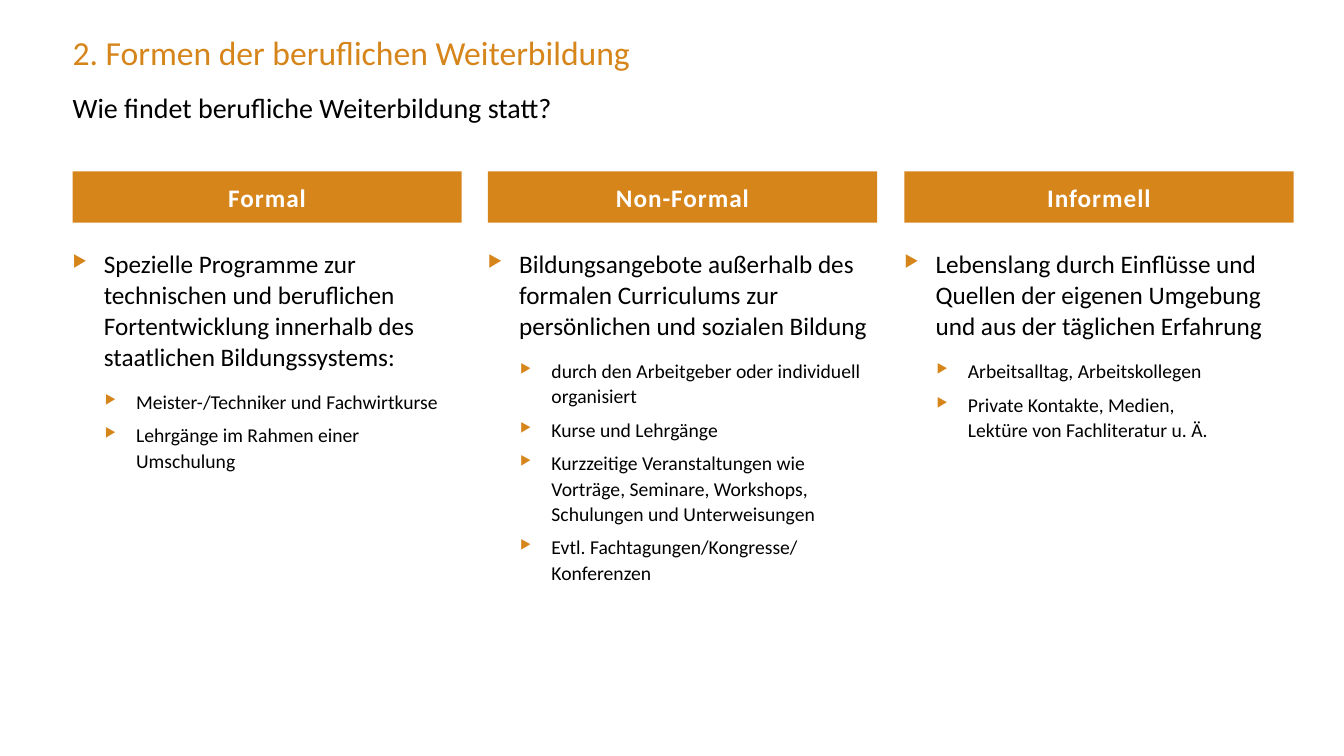
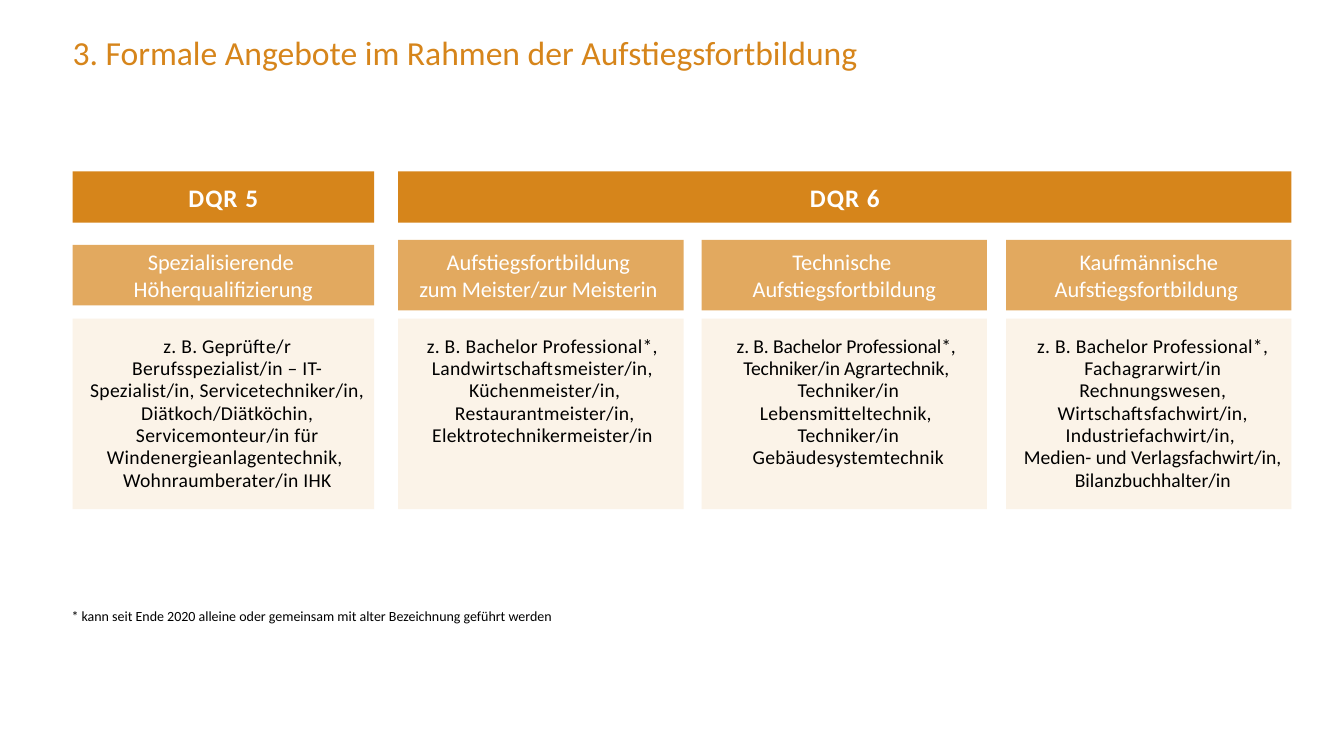
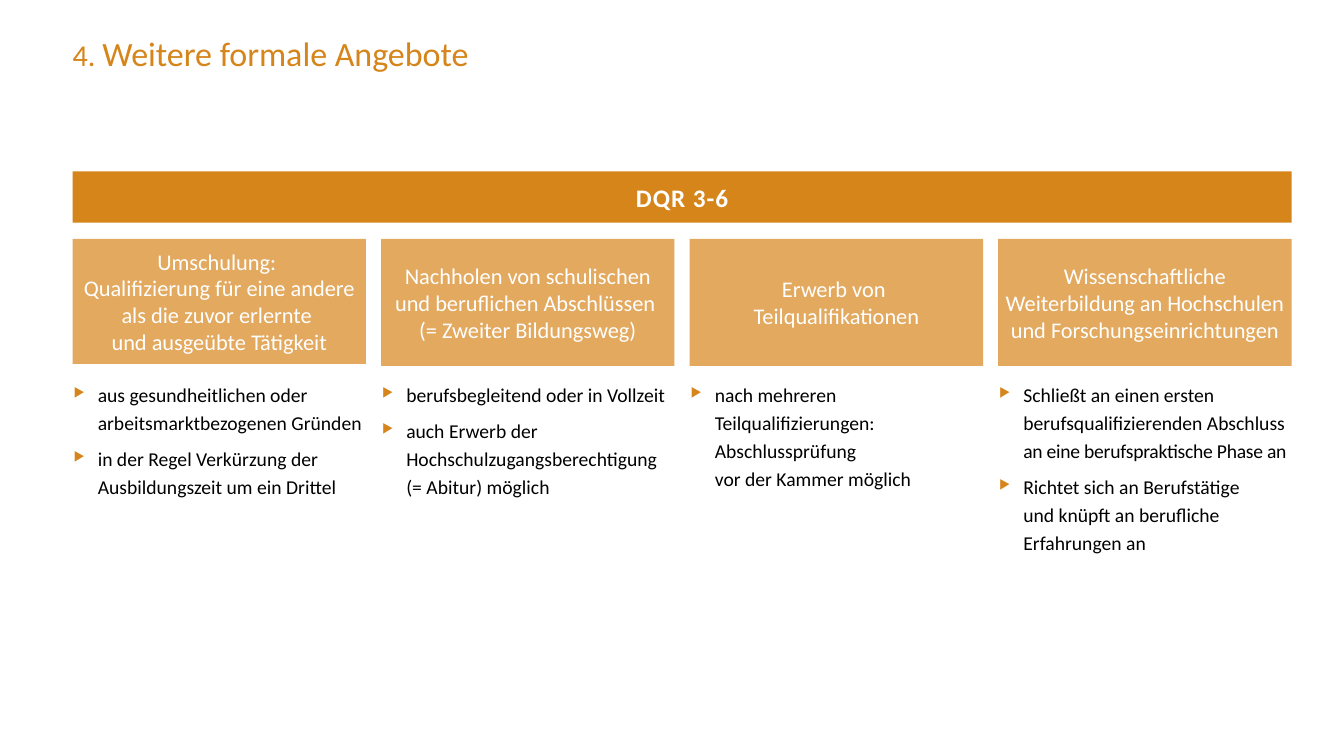
from lxml import etree
from pptx import Presentation
from pptx.dml.color import RGBColor
from pptx.enum.shapes import MSO_SHAPE
from pptx.enum.text import MSO_ANCHOR, PP_ALIGN
from pptx.oxml.ns import qn
from pptx.util import Emu, Pt

ORANGE, LIGHT_ORANGE, CREAM = "D6851B", "E2A95F", "FBF3E8"
BLACK, WHITE = "000000", "FFFFFF"
LEFT, RIGHT, BAND_TOP, BAND_HEIGHT = 72, 1281, 170, 51

# Paragraph formats for bullets; margin and indent in px
TOPIC = {"size": 18, "line": 22, "after": 6, "margin": 31, "indent": 31}
DETAIL = {"size": 14, "line": 18, "before": 6, "margin": 63, "indent": 31, "level": 1}
NOTE = {"size": 14, "line": 20, "before": 6, "margin": 55, "indent": 24, "level": 1}


def px(length):
    """One px is a hundredth of an inch."""
    return Emu(round(length * 9144))


def color(code):
    return RGBColor.from_string(code)


def columns(left, right, count, gap):
    """Left edges and common width of equal columns."""
    width = (right - left - gap * (count - 1)) / count
    return [round(left + i * (width + gap)) for i in range(count)], round(width)


class Slides:
    def __init__(self):
        self.deck = Presentation()
        self.deck.slide_width, self.deck.slide_height = px(1333), px(750)
        self.page = None

    def new_page(self, *title):
        self.page = self.deck.slides.add_slide(self.deck.slide_layouts[6])
        self.text(LEFT, 32, 984, 49, title, 24, ORANGE)

    # Text: a span is a string or a (string, overrides) pair
    def add_spans(self, para, spans, size, code, bold=False, spacing=0):
        for span in spans:
            words, changes = (span, {}) if isinstance(span, str) else span
            style = {"size": size, "bold": bold, "spacing": spacing, **changes}
            for i, line in enumerate(words.split("\n")):
                if i:
                    para.add_line_break()
                if not line:
                    continue
                run = para.add_run()
                run.text = line
                font = {"name": "Calibri", "size": Pt(style["size"]), "bold": style["bold"]}
                for name, value in font.items():
                    setattr(run.font, name, value)
                run.font.color.rgb = color(code)
                if style["spacing"]:
                    run.font._element.set("spc", str(round(style["spacing"] * 100)))

    def frame(self, box, insets=(0, 0, 0, 0), anchor=MSO_ANCHOR.TOP):
        frame = box.text_frame
        sides = ("margin_left", "margin_top", "margin_right", "margin_bottom")
        settings = {"word_wrap": True, "vertical_anchor": anchor,
                    **{side: px(inset) for side, inset in zip(sides, insets)}}
        for name, value in settings.items():
            setattr(frame, name, value)
        return frame

    def text_box(self, left, top, width, height):
        box = self.page.shapes.add_textbox(px(left), px(top), px(width), px(height))
        return self.frame(box)

    def text(self, left, top, width, height, spans, size, code=BLACK):
        frame = self.text_box(left, top, width, height)
        self.add_spans(frame.paragraphs[0], spans, size, code)

    def bullets(self, left, top, width, height, items):
        frame = self.text_box(left, top, width, height)
        for i, (form, *spans) in enumerate(items):
            para = frame.add_paragraph() if i else frame.paragraphs[0]
            self.add_bullet(para, form)
            spacing = {"level": form.get("level", 0), "line_spacing": Pt(form["line"]),
                       "space_before": Pt(form.get("before", 0) if i else 0),
                       "space_after": Pt(form.get("after", 0))}
            for name, value in spacing.items():
                setattr(para, name, value)
            self.add_spans(para, spans, form["size"], BLACK)

    def add_bullet(self, para, form):
        props = para._p.get_or_add_pPr()
        props.set("marL", str(px(form["margin"])))
        props.set("indent", str(-px(form["indent"])))
        bullet_color = etree.SubElement(props, qn("a:buClr"))
        etree.SubElement(bullet_color, qn("a:srgbClr"), val=ORANGE)
        etree.SubElement(props, qn("a:buSzPct"), val="65000")
        etree.SubElement(props, qn("a:buChar"), char="▶")

    # Filled rectangles
    def panel(self, left, top, width, height, fill, spans, size, code, insets,
              anchor=MSO_ANCHOR.MIDDLE, line=None, **style):
        box = self.page.shapes.add_shape(
            MSO_SHAPE.RECTANGLE, px(left), px(top), px(width), px(height))
        box.shadow.inherit = False
        box.fill.solid()
        box.fill.fore_color.rgb = color(fill)
        box.line.fill.background()
        para = self.frame(box, insets, anchor).paragraphs[0]
        para.alignment = PP_ALIGN.CENTER
        if line:
            para.line_spacing = Pt(line)
        self.add_spans(para, spans, size, code, **style)

    def band(self, left, width, label):
        self.panel(left, BAND_TOP, width, BAND_HEIGHT, ORANGE, [label], 18, WHITE,
                   (4, 8, 4, 0), line=17, bold=True, spacing=0.7)

    def heading(self, left, top, width, height, spans):
        self.panel(left, top, width, height, LIGHT_ORANGE, spans, 16, WHITE, (4, 8, 4, 8))

    def examples(self, left, width, spans):
        self.panel(left, 316, width, 189, CREAM, spans, 14, BLACK, (16, 16, 8, 16),
                   anchor=MSO_ANCHOR.TOP, line=16, spacing=0.2)


def forms_page(slides):
    slides.new_page("2. Formen der beruflichen Weiterbildung")
    slides.text(LEFT, 90, 1209, 48, ["Wie findet berufliche Weiterbildung statt?"], 20)
    forms = [
        ("Formal",
         "Spezielle Programme zur technischen und beruflichen Fortentwicklung "
         "innerhalb des staatlichen Bildungssystems:",
         ["Meister-/Techniker und Fachwirtkurse", "Lehrgänge im Rahmen einer Umschulung"]),
        ("Non-Formal",
         "Bildungsangebote außerhalb des formalen Curriculums zur persönlichen "
         "und sozialen Bildung",
         ["durch den Arbeitgeber oder individuell organisiert", "Kurse und Lehrgänge",
          "Kurzzeitige Veranstaltungen wie Vorträge, Seminare, Workshops, "
          "Schulungen und Unterweisungen",
          "Evtl. Fachtagungen/Kongresse/ Konferenzen"]),
        ("Informell",
         "Lebenslang durch Einflüsse und Quellen der eigenen Umgebung und aus "
         "der täglichen Erfahrung",
         ["Arbeitsalltag, Arbeitskollegen",
          "Private Kontakte, Medien, \nLektüre von Fachliteratur u. Ä."]),
    ]
    lefts, width = columns(LEFT, 1283, 3, 26)
    for left, (label, topic, details) in zip(lefts, forms):
        slides.band(left, width, label)
        items = [(TOPIC, topic)] + [(DETAIL, detail) for detail in details]
        slides.bullets(left, 246, width, 403, items)


def advancement_page(slides):
    slides.new_page("3. Formale Angebote im Rahmen der Aufstiegsfortbildung")
    # Level 5
    slides.band(LEFT, 299, "DQR 5")
    slides.heading(LEFT, 243, 299, 60, ["Spezialisierende \nHöherqualifizierung"])
    slides.examples(LEFT, 299, [
        "z. B. Geprüfte/r Berufsspezialist/in – IT-Spezialist/in, Servicetechniker/in, "
        "Diätkoch/Diätköchin, Servicemonteur/in für Windenergieanlagentechnik, \n"
        "Wohnraumberater/in IHK"])
    # Level 6
    level_left = 395
    slides.band(level_left, RIGHT - level_left, "DQR 6")
    paths = [
        (["Aufstiegsfortbildung \n", ("zum Meister/zur Meisterin ", {"spacing": -0.1})],
         ["z. B. Bachelor Professional*, \nLandwirtschaftsmeister/in, \nKüchenmeister/in, "
          "Restaurantmeister/in, Elektrotechnikermeister/in "]),
        (["Technische \nAufstiegsfortbildung"],
         [("z. B. Bachelor Professional*, \nTechniker/in Agrartechnik, \n", {"spacing": -0.1}),
          "Techniker/in Lebensmitteltechnik, \nTechniker/in Gebäudesystemtechnik"]),
        (["Kaufmännische Aufstiegsfortbildung "],
         ["z. B. Bachelor Professional*, Fachagrarwirt/in Rechnungswesen, "
          "Wirtschaftsfachwirt/in, Industriefachwirt/in, \n",
          ("Medien- und Verlagsfachwirt/in, Bilanzbuchhalter/in", {"spacing": 0})]),
    ]
    lefts, width = columns(level_left, RIGHT, 3, 18)
    for left, (heading, examples) in zip(lefts, paths):
        slides.heading(left, 238, width, 70, heading)
        slides.examples(left, width, examples)
    slides.text(71, 603, 800, 20, [
        "* kann seit Ende 2020 alleine oder gemeinsam mit alter Bezeichnung geführt werden"], 10)


def further_page(slides):
    slides.new_page(("4. ", {"size": 21.6}), ("Weitere formale Angebote", {"size": 24.3}))
    slides.band(LEFT, RIGHT - LEFT, "DQR 3-6")
    offers = [
        (124, "Umschulung: \nQualifizierung für eine andere als die zuvor erlernte \n"
              "und ausgeübte Tätigkeit",
         [["aus gesundheitlichen oder arbeitsmarktbezogenen Gründen"],
          ["in der Regel Verkürzung der Ausbildungszeit um ein Drittel"]]),
        (126, "Nachholen von schulischen und beruflichen Abschlüssen \n(= Zweiter Bildungsweg)",
         [["berufsbegleitend oder in Vollzeit"],
          ["auch Erwerb der Hochschulzugangsberechtigung (= Abitur) möglich"]]),
        (126, "Erwerb von \nTeilqualifikationen",
         [["nach mehreren Teilqualifizierungen: Abschlussprüfung \nvor der Kammer möglich"]]),
        (126, "Wissenschaftliche Weiterbildung an Hochschulen und Forschungseinrichtungen",
         [["Schließt an einen ersten berufsqualifizierenden Abschluss ",
           ("an eine berufspraktische Phase an", {"spacing": -0.2})],
          ["Richtet sich an Berufstätige \nund knüpft an berufliche Erfahrungen an"]]),
    ]
    lefts, width = columns(LEFT, RIGHT, 4, 15)
    for left, (height, heading, notes) in zip(lefts, offers):
        slides.heading(left, 237, width, height, [heading])
        slides.bullets(left - 30, 375, 324, 225, [(NOTE, *spans) for spans in notes])


def main():
    slides = Slides()
    for build in (forms_page, advancement_page, further_page):
        build(slides)
    slides.deck.save("out.pptx")


if __name__ == "__main__":
    main()
